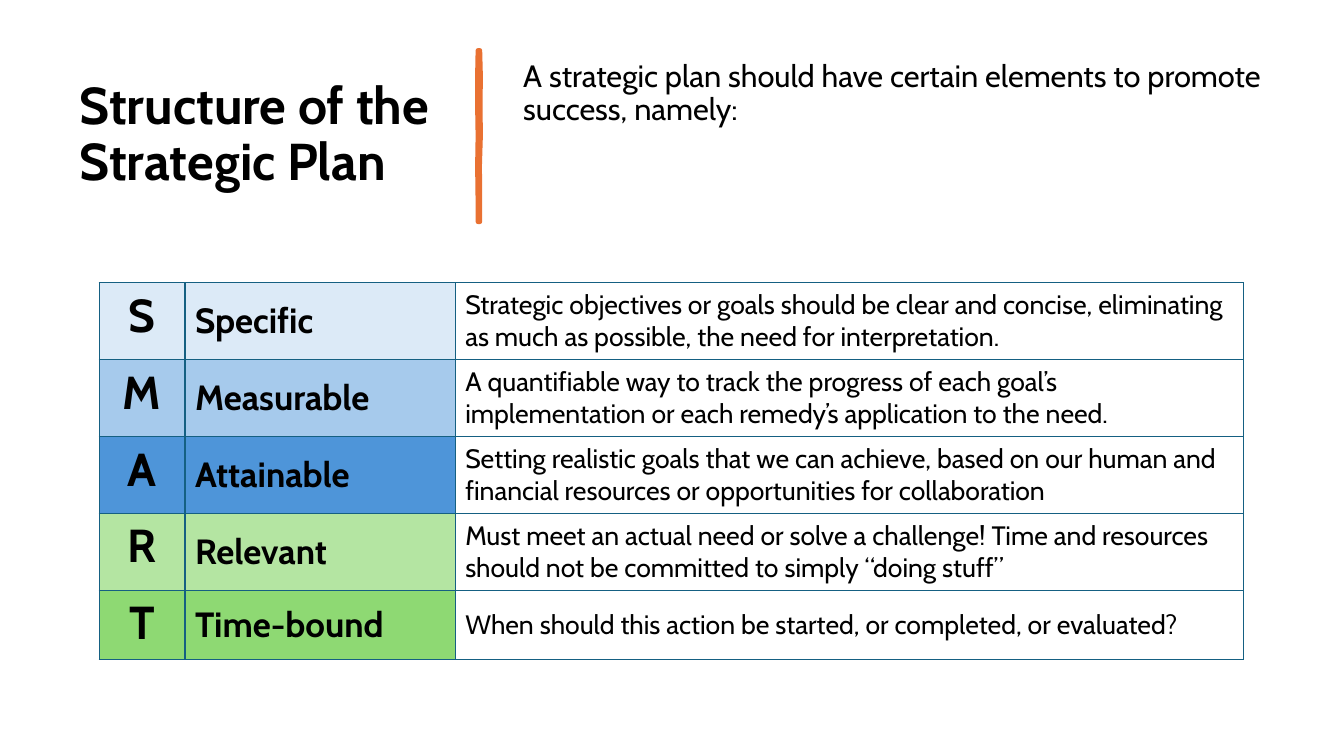
import pptx
import pptx.util
import pptx.dml.color
import pptx.enum.text
import pptx.oxml

INK, RULE, BORDER, PAPER = "000000", "E97132", "156082", "FFFFFF"
ALIGN = pptx.enum.text.PP_ALIGN
ANCHOR = pptx.enum.text.MSO_ANCHOR


def color(hex_value):
    return pptx.dml.color.RGBColor.from_string(hex_value)


def style(paragraph, size, bold, alignment, spacing):
    paragraph.alignment = alignment
    paragraph.line_spacing = spacing
    look = {"name": "Cabin", "size": pptx.util.Pt(size), "bold": bold}
    for attribute, value in look.items():
        setattr(paragraph.font, attribute, value)
    paragraph.font.color.rgb = color(INK)


deck = pptx.Presentation()
deck.slide_width = pptx.util.Inches(13.33)
deck.slide_height = pptx.util.Inches(7.5)
slide = deck.slides.add_slide(deck.slide_layouts[1])

# Grid: one hundredth of the slide's width and height
col, row = deck.slide_width / 100, deck.slide_height / 100
header_top, header_height = 7.33, 21.33

# Title and introduction
heading, intro = slide.placeholders
headers = [
    (heading, "Structure of the Strategic Plan", 5.18, 28.06, 37, True, ANCHOR.MIDDLE),
    (intro, "A strategic plan should have certain elements to promote success, namely:",
     38.18, 56.56, 22, False, ANCHOR.TOP),
]
for holder, wording, left, width, size, bold, anchor in headers:
    place = {"left": left * col, "top": header_top * row,
             "width": width * col, "height": header_height * row}
    for attribute, value in place.items():
        setattr(holder, attribute, int(value))
    frame = holder.text_frame
    frame.text = wording
    frame.word_wrap = True
    frame.auto_size = pptx.enum.text.MSO_AUTO_SIZE.NONE
    frame.vertical_anchor = anchor
    paragraph = frame.paragraphs[0]
    properties = paragraph._p.get_or_add_pPr()
    properties.set("marL", "0")
    properties.set("indent", "0")
    properties.append(pptx.oxml.parse_xml(
        '<a:buNone xmlns:a="http://schemas.openxmlformats.org/drawingml/2006/main"/>'))
    style(paragraph, size, bold, ALIGN.LEFT, 0.9)
    paragraph.space_before = pptx.util.Pt(0)

# Hand-drawn vertical rule between them
right_edge = [(35.71, 6.67), (35.76, 10), (35.74, 14), (35.76, 18),
              (35.69, 22), (35.71, 25.5), (35.71, 29.33)]
left_edge = [(35.56, 29.33), (35.55, 25.5), (35.52, 22), (35.56, 18),
             (35.52, 14), (35.52, 10), (35.56, 6.67)]
outline = [(x * col, y * row) for x, y in right_edge + left_edge]
builder = slide.shapes.build_freeform(*outline[0])
builder.add_line_segments(outline[1:], close=True)
divider = builder.convert_to_shape()
divider.shadow.inherit = False
divider.fill.solid()
divider.fill.fore_color.rgb = color(RULE)
divider.line.color.rgb = color(RULE)
divider.line.width = pptx.util.Pt(3.25)

# SMART table
goals = [
    ("DCEAF7", "Specific", "Strategic objectives or goals should be clear and concise, "
     "eliminating as much as possible, the need for interpretation."),
    ("A6CAEC", "Measurable", "A quantifiable way to track the progress of each goal’s "
     "implementation or each remedy’s application to the need."),
    ("4E95D9", "Attainable", "Setting realistic goals that we can achieve, based on our human "
     "and financial resources or opportunities for collaboration"),
    ("B4E5A2", "Relevant", "Must meet an actual need or solve a challenge! Time and resources "
     "should not be committed to simply “doing stuff”"),
    ("8ED973", "Time-bound", "When should this action be started, or completed, or evaluated?"),
]
widths = [6.38, 20.1, 58.66]
heights = [10.17] * 4 + [9.2]
smart = slide.shapes.add_table(
    len(goals), len(widths), int(7.39 * col), int(37.4 * row),
    int(sum(widths) * col), int(sum(heights) * row)).table
for flag in ("first_row", "horz_banding"):
    setattr(smart, flag, False)
for column, width in zip(smart.columns, widths):
    column.width = int(width * col)

# Size, bold, alignment and anchor of each column
column_looks = [(33, True, ALIGN.CENTER, ANCHOR.TOP),
                (25, True, ALIGN.LEFT, ANCHOR.MIDDLE),
                (19, False, ALIGN.LEFT, ANCHOR.MIDDLE)]
for r, (tint, goal, meaning) in enumerate(goals):
    smart.rows[r].height = int(heights[r] * row)
    wordings = (goal[0], goal, meaning)
    fills = (tint, tint, PAPER)
    for c, (size, bold, alignment, anchor) in enumerate(column_looks):
        cell = smart.cell(r, c)
        cell.text = wordings[c]
        cell.vertical_anchor = anchor
        style(cell.text_frame.paragraphs[0], size, bold, alignment, 1.0)
        for side in "LRTB":
            cell._tc.get_or_add_tcPr().append(pptx.oxml.parse_xml(
                f'<a:ln{side} xmlns:a="http://schemas.openxmlformats.org/drawingml/2006/main"'
                f' w="12700"><a:solidFill><a:srgbClr val="{BORDER}"/></a:solidFill></a:ln{side}>'))
        cell.fill.solid()
        cell.fill.fore_color.rgb = color(fills[c])

deck.save("out.pptx")
